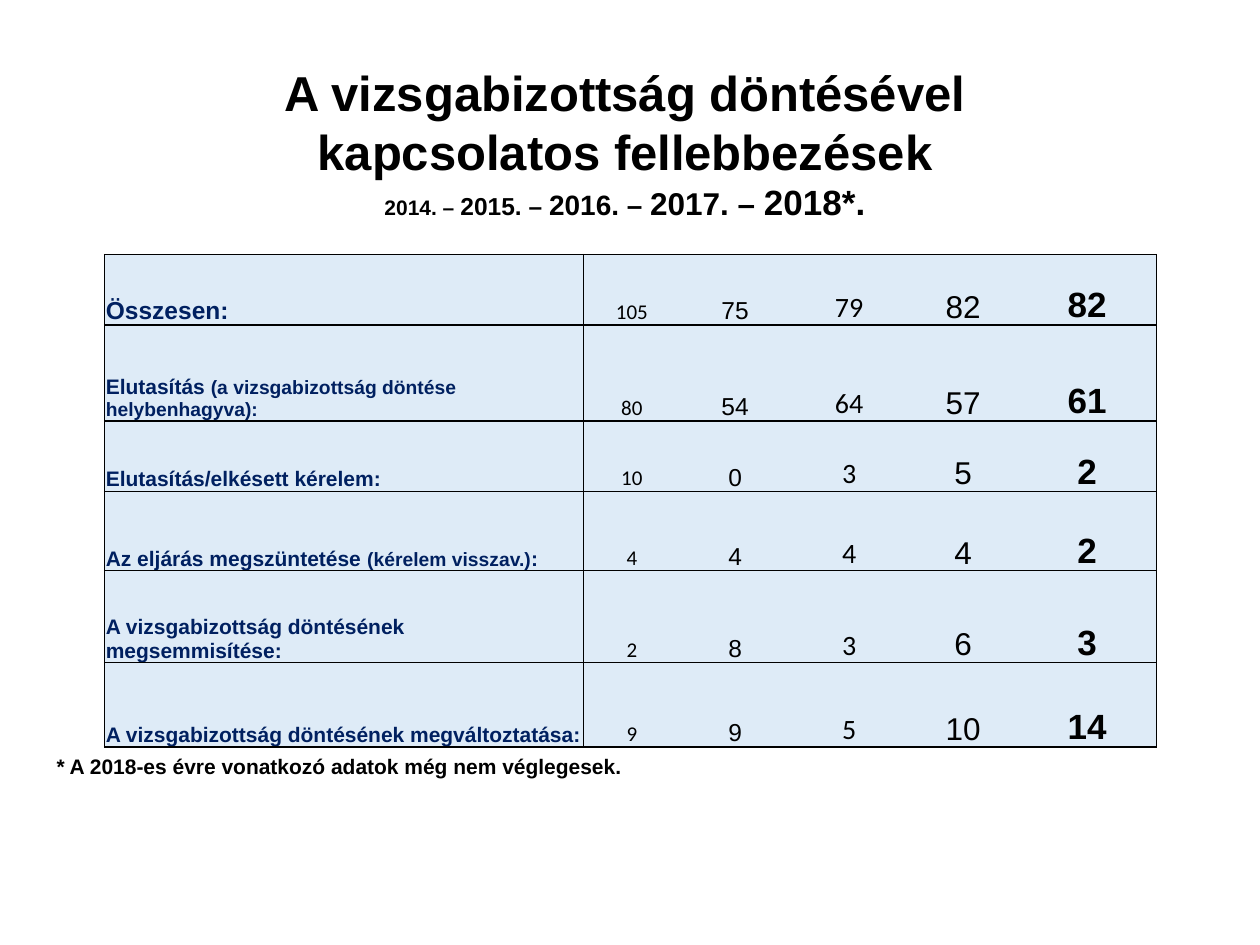
from lxml import etree
from pptx import Presentation
from pptx import util as u
from pptx.dml.color import RGBColor
from pptx.enum import text
from pptx.oxml import ns

COLORS = {"ink": "000000", "label": "002060", "cell": "DEEBF7"}
TITLE = "A vizsgabizottság döntésével kapcsolatos fellebbezések"
YEARS = ["2014. – ", "2015. – ", "2016. – ", "2017. – ", "2018*."]
SIZES = [12, 14, 16, 18, 20]
FONTS = ["Calibri", "Arial", "Calibri", "Arial", "Arial"]
COL_WIDTHS = [3.8, 0.77, 0.87, 0.94, 0.87, 1.1]
ROWS = [
    (0.56, [("Összesen:", 14)], [105, 75, 79, 82, 82]),
    (0.76, [("Elutasítás ", 12), ("(a vizsgabizottság döntése helybenhagyva):", 11)],
     [80, 54, 64, 57, 61]),
    (0.56, [("Elutasítás/elkésett kérelem:", 12)], [10, 0, 3, 5, 2]),
    (0.63, [("Az eljárás megszüntetése ", 12), ("(kérelem visszav.)", 11), (":", 12)],
     [4, 4, 4, 4, 2]),
    (0.73, [("A vizsgabizottság döntésének megsemmisítése:", 12)], [2, 8, 3, 6, 3]),
    (0.67, [("A vizsgabizottság döntésének megváltoztatása:", 12)], [9, 9, 5, 10, 14]),
]
NOTE = "* A 2018-es évre vonatkozó adatok még nem véglegesek."


def add_run(p, content, size, color="ink", font="Arial", bold=True):
    """Append a formatted run to a paragraph."""
    r = p.add_run()
    r.text = content
    r.font.size = u.Pt(size)
    r.font.name = font
    r.font.bold = bold
    r.font.color.rgb = RGBColor.from_string(COLORS[color])


def style_cell(cell, sides):
    """Set borders on the given sides, then the fill, margins and anchor."""
    tcPr = cell._tc.get_or_add_tcPr()
    for side in "LRTB":
        ln = etree.SubElement(tcPr, ns.qn(f"a:ln{side}"), w=str(u.Pt(1)))
        if side in sides:
            fill = etree.SubElement(ln, ns.qn("a:solidFill"))
            etree.SubElement(fill, ns.qn("a:srgbClr"), val=COLORS["ink"])
        else:
            etree.SubElement(ln, ns.qn("a:noFill"))
    cell.fill.solid()
    cell.fill.fore_color.rgb = RGBColor.from_string(COLORS["cell"])
    cell.margin_left = cell.margin_right = cell.margin_top = u.Inches(0.01)
    cell.margin_bottom = 0
    cell.vertical_anchor = text.MSO_ANCHOR.BOTTOM


def add_title(s, x, y, w, h):
    """Place the title with its line of growing years."""
    sp = s.shapes.title
    sp.left, sp.top, sp.width, sp.height = map(u.Inches, (x, y, w, h))
    tf = sp.text_frame
    tf.auto_size = text.MSO_AUTO_SIZE.NONE
    tf.vertical_anchor = text.MSO_ANCHOR.MIDDLE
    p = tf.paragraphs[0]
    p.alignment = text.PP_ALIGN.CENTER
    add_run(p, TITLE, 28)
    p.add_line_break()
    for year, size in zip(YEARS, SIZES):
        add_run(p, year, size)


def add_appeals_table(s, x, y, w, h):
    """Place the table of appeals by outcome and year."""
    frame = s.shapes.add_table(len(ROWS), len(COL_WIDTHS), *map(u.Inches, (x, y, w, h)))
    table = frame.table
    table.first_row = table.horz_banding = False
    for col, width in zip(table.columns, COL_WIDTHS):
        col.width = u.Inches(width)
    last = len(COL_WIDTHS) - 1
    for i, (height, label, values) in enumerate(ROWS):
        table.rows[i].height = u.Inches(height)
        for j in range(last + 1):
            sides = "TB" + ("L" if j < 2 else "") + ("R" if j in (0, last) else "")
            style_cell(table.cell(i, j), sides)
        for part, size in label:
            add_run(table.cell(i, 0).text_frame.paragraphs[0], part, size, "label")
        for j, (value, size, font) in enumerate(zip(values, SIZES, FONTS), 1):
            p = table.cell(i, j).text_frame.paragraphs[0]
            p.alignment = text.PP_ALIGN.CENTER
            add_run(p, str(value), size, font=font, bold=j == last)


def add_note(s, x, y, w, h):
    """Place the footnote below the table."""
    tf = s.shapes.add_textbox(*map(u.Inches, (x, y, w, h))).text_frame
    tf.word_wrap = True
    tf.auto_size = text.MSO_AUTO_SIZE.SHAPE_TO_FIT_TEXT
    p = tf.paragraphs[0]
    p.line_spacing = 0.9
    add_run(p, NOTE, 12)


def main():
    """Build and save the slide."""
    prs = Presentation()
    prs.slide_width, prs.slide_height = u.Inches(10), u.Inches(7.5)
    s = prs.slides.add_slide(prs.slide_layouts[5])
    add_title(s, 1.85, 0.68, 6.22, 0.9)
    add_appeals_table(s, 0.83, 2.02, 8.35, 3.92)
    add_note(s, 0.35, 5.95, 9.41, 0.28)
    prs.save("out.pptx")


if __name__ == "__main__":
    main()
